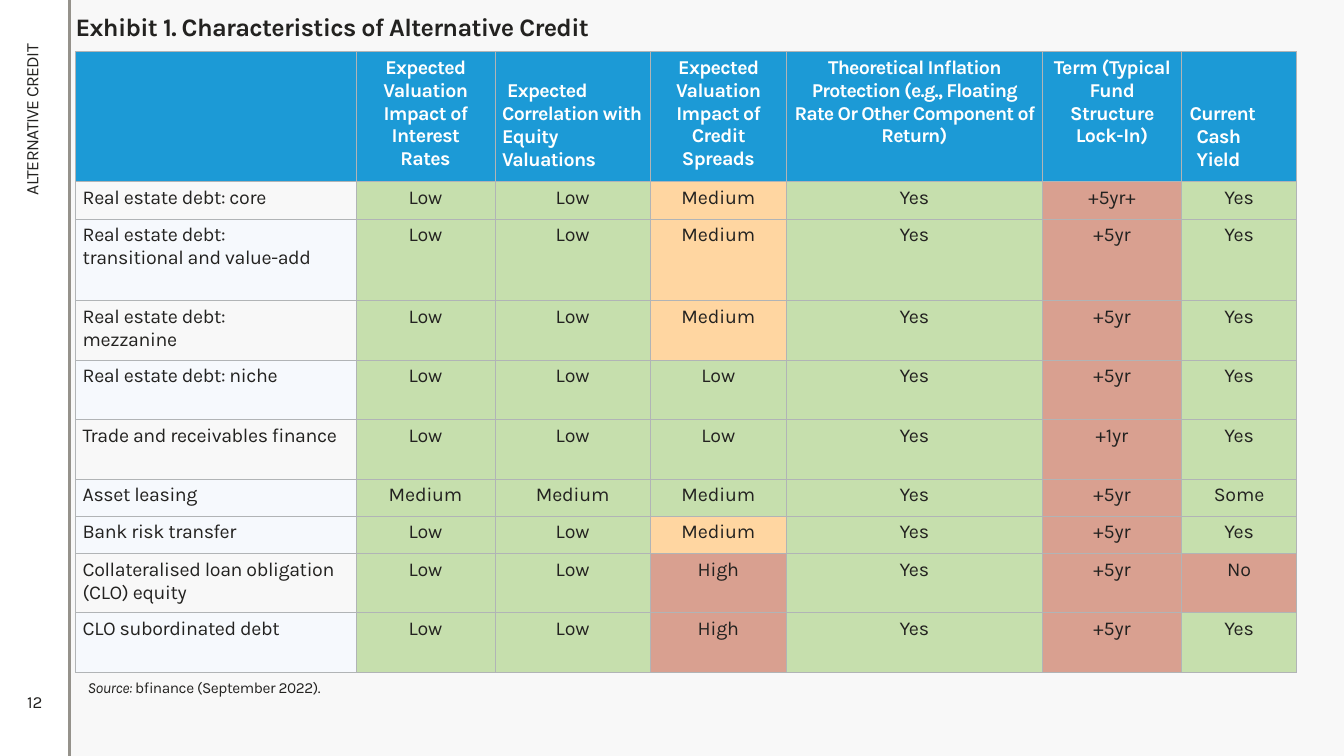
from pptx import Presentation
from pptx.dml.color import RGBColor
from pptx.enum.shapes import MSO_CONNECTOR, MSO_SHAPE
from pptx.enum.text import MSO_ANCHOR, MSO_AUTO_SIZE, PP_ALIGN
from pptx.oxml import parse_xml
from pptx.oxml.ns import nsdecls
from pptx.util import Inches, Pt
from lxml.etree import SubElement

COLORS = {"background": "F8F8F8", "panel": "FFFFFF", "rule": "95928B", "text": "232220",
          "header": "1C9AD6", "band": "F6F9FD", "green": "C6DFAD", "amber": "FFD6A1",
          "red": "D9A090", "border": "B1B4B6"}
PANEL_WIDTH = 0.69


def write(frame, runs, size, color="text", align=PP_ALIGN.LEFT, spacing=-0.2, **formats):
    frame.word_wrap = True
    paragraph = frame.paragraphs[0]
    paragraph.alignment = align
    for text, extra in runs:
        run = paragraph.add_run()
        run.text = text
        settings = {"name": "Karla", "size": Pt(size), "bold": False, **formats, **extra}
        for name, value in settings.items():
            setattr(run.font, name, value)
        run.font.color.rgb = RGBColor.from_string(COLORS[color])
        run.font._element.set("spc", str(round(spacing * 100)))
    return paragraph


def set_margins(target, left=0, top=0, right=0, bottom=0):
    sides = {"left": left, "top": top, "right": right, "bottom": bottom}
    for side, value in sides.items():
        setattr(target, f"margin_{side}", Inches(value))


presentation = Presentation()
presentation.slide_width = Inches(13.33)
presentation.slide_height = Inches(7.5)
slide = presentation.slides.add_slide(presentation.slide_layouts[5])
slide.background.fill.solid()
slide.background.fill.fore_color.rgb = RGBColor.from_string(COLORS["background"])

panel = slide.shapes.add_shape(MSO_SHAPE.RECTANGLE, 0, 0, Inches(PANEL_WIDTH), presentation.slide_height)
panel.shadow.inherit = False
panel.fill.solid()
panel.fill.fore_color.rgb = RGBColor.from_string(COLORS["panel"])
panel.line.fill.background()

rule = slide.shapes.add_connector(MSO_CONNECTOR.STRAIGHT, Inches(PANEL_WIDTH), 0,
                                  Inches(PANEL_WIDTH), presentation.slide_height)
rule.line.color.rgb = RGBColor.from_string(COLORS["rule"])
rule.line.width = Pt(1.5)
rule._element.spPr.append(parse_xml(f"<a:effectLst {nsdecls('a')}/>"))

section = slide.shapes.add_textbox(Inches(0.12), Inches(0.34), Inches(0.38), Inches(4.09)).text_frame
write(section, [("ALTERNATIVE CREDIT", {})], 12.5, align=PP_ALIGN.RIGHT, spacing=-0.45)
section.vertical_anchor = MSO_ANCHOR.MIDDLE
section._txBody.bodyPr.set("vert", "vert270")

page = slide.shapes.add_textbox(0, Inches(6.76), Inches(PANEL_WIDTH), Inches(0.4)).text_frame
write(page, [("12", {})], 12.1, align=PP_ALIGN.CENTER, spacing=0)
page.vertical_anchor = MSO_ANCHOR.MIDDLE

title = slide.shapes.title
for name, value in {"left": 0.74, "top": 0.1, "width": 6.6, "height": 0.32}.items():
    setattr(title, name, Inches(value))
title.text_frame.auto_size = MSO_AUTO_SIZE.NONE
title.text_frame.vertical_anchor = MSO_ANCHOR.TOP
set_margins(title.text_frame, left=0.01, top=0.01)
write(title.text_frame, [("Exhibit 1. Characteristics of Alternative Credit", {})], 18, spacing=-0.48, bold=True)

column_widths = [2.78, 1.38, 1.54, 1.35, 2.54, 1.38, 1.14]
row_heights = [1.29, 0.37, 0.81, 0.59, 0.59, 0.59, 0.37, 0.37, 0.59, 0.59]
center, left = PP_ALIGN.CENTER, PP_ALIGN.LEFT
headers = [
    ("", center, -0.5, {}),
    ("Expected Valuation Impact of Interest Rates", center, -0.45, {"left": 0.12, "top": 0.05, "right": 0.12}),
    ("Expected Correlation with Equity Valuations", left, -0.5, {"left": 0.07, "top": 0.28}),
    ("Expected Valuation Impact of Credit Spreads", center, -0.45, {"left": 0.07, "top": 0.05, "right": 0.07}),
    ("Theoretical Inflation Protection (e.g., Floating Rate Or Other Component of Return)",
     center, -0.6, {"left": 0.05, "top": 0.05, "right": 0.05}),
    ("Term (Typical Fund Structure Lock-In)", center, -0.4, {"left": 0.07, "top": 0.05, "right": 0.07}),
    ("Current Cash Yield", left, -0.5, {"left": 0, "top": 0.51, "right": 0.3}),
]
hanging = {2: (0, 0.05), 6: (0.15, -0.07)}
credits = [
    ("Real estate debt: core", "Low", "Low", "Medium", "Yes", "+5yr+", "Yes"),
    ("Real estate debt: transitional and value-add", "Low", "Low", "Medium", "Yes", "+5yr", "Yes"),
    ("Real estate debt: mezzanine", "Low", "Low", "Medium", "Yes", "+5yr", "Yes"),
    ("Real estate debt: niche", "Low", "Low", "Low", "Yes", "+5yr", "Yes"),
    ("Trade and receivables finance", "Low", "Low", "Low", "Yes", "+1yr", "Yes"),
    ("Asset leasing", "Medium", "Medium", "Medium", "Yes", "+5yr", "Some"),
    ("Bank risk transfer", "Low", "Low", "Medium", "Yes", "+5yr", "Yes"),
    ("Collateralised loan obligation (CLO) equity", "Low", "Low", "High", "Yes", "+5yr", "No"),
    ("CLO subordinated debt", "Low", "Low", "High", "Yes", "+5yr", "Yes"),
]
banded_rows = {2, 4, 6, 7, 9}
early_wrap_rows = {2, 3}
spread_column, term_column = 3, 5

frame = slide.shapes.add_table(len(row_heights), len(column_widths), Inches(0.75), Inches(0.51),
                               Inches(sum(column_widths)), Inches(sum(row_heights)))
table = frame.table
table.first_row = table.horz_banding = False
for column, width in zip(table.columns, column_widths):
    column.width = Inches(width)
for row, height in zip(table.rows, row_heights):
    row.height = Inches(height)

for column, (text, align, spacing, margins) in enumerate(headers):
    cell = table.cell(0, column)
    set_margins(cell, **margins)
    paragraph = write(cell.text_frame, [(text, {})] if text else [], 14, "panel", align, spacing, bold=True)
    if column in hanging:
        margin, indent = hanging[column]
        properties = paragraph._p.get_or_add_pPr()
        properties.set("marL", str(Inches(margin)))
        properties.set("indent", str(Inches(indent)))
    cell.fill.solid()
    cell.fill.fore_color.rgb = RGBColor.from_string(COLORS["header"])

for row, values in enumerate(credits, 1):
    for column, text in enumerate(values):
        cell = table.cell(row, column)
        if column == 0:
            set_margins(cell, left=0.07, top=0.05, right=0.37 if row in early_wrap_rows else 0)
            write(cell.text_frame, [(text, {})], 14, spacing=-0.28)
            fill = "band" if row in banded_rows else None
        else:
            set_margins(cell, top=0.05)
            write(cell.text_frame, [(text, {})], 14, align=center, spacing=-0.1)
            if column == term_column or text in ("High", "No"):
                fill = "red"
            elif column == spread_column and text == "Medium" and values[0] != "Asset leasing":
                fill = "amber"
            else:
                fill = "green"
        if fill:
            cell.fill.solid()
            cell.fill.fore_color.rgb = RGBColor.from_string(COLORS[fill])
        else:
            cell.fill.background()

for cell in table.iter_cells():
    properties = cell._tc.get_or_add_tcPr()
    for position, side in enumerate(("lnL", "lnR", "lnT", "lnB")):
        border = parse_xml(f'<a:{side} {nsdecls("a")} w="{Pt(0.25)}"><a:solidFill>'
                           f'<a:srgbClr val="{COLORS["border"]}"/></a:solidFill></a:{side}>')
        properties.insert(position, border)

source = slide.shapes.add_textbox(Inches(0.86), Inches(6.72), Inches(2.84), Inches(0.2)).text_frame
set_margins(source, left=0.01, top=0.01)
write(source, [("Source: ", {"italic": True}), ("bfinance (September 2022).", {})], 11, spacing=-0.3)

presentation.save("out.pptx")
